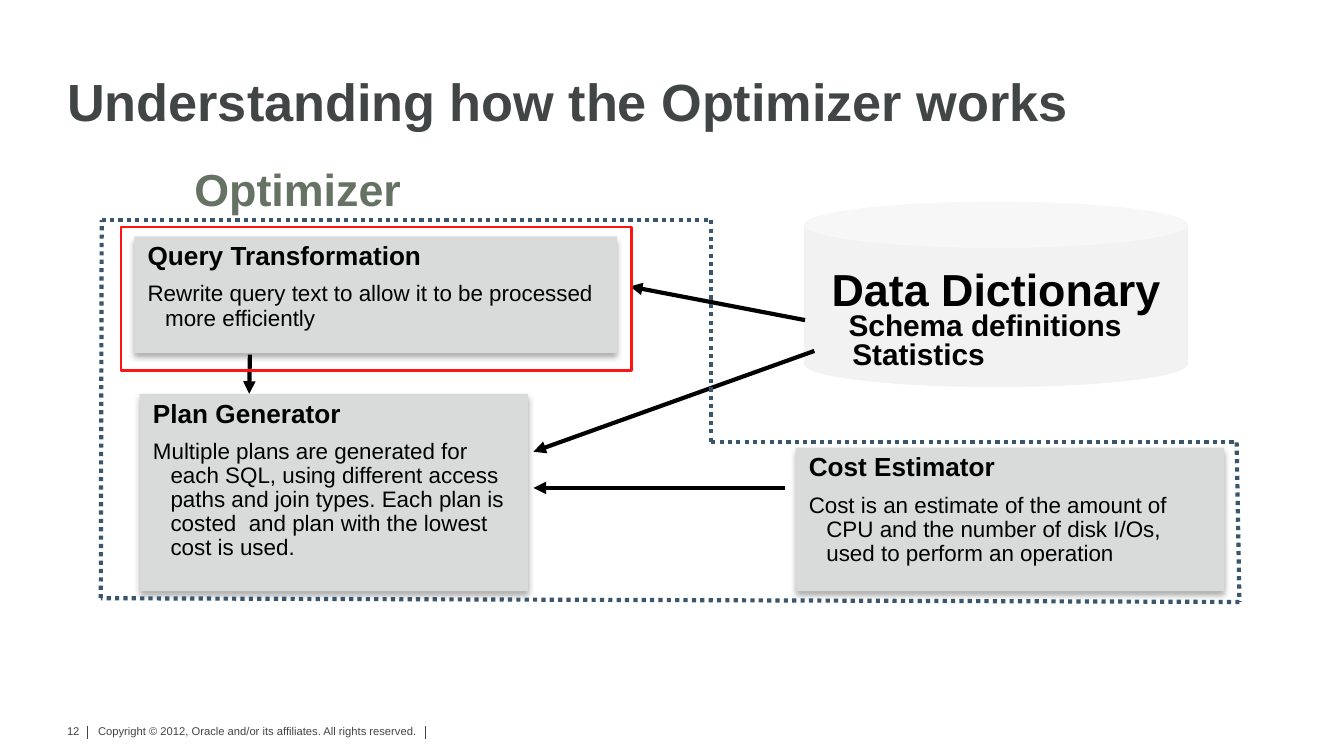
import itertools
from dataclasses import dataclass

import pptx
import pptx.dml.color
import pptx.enum.dml
import pptx.enum.shapes
import pptx.enum.text
import pptx.oxml
import pptx.oxml.ns
import pptx.util
from lxml import etree

Pt = pptx.util.Pt
ShapeKind = pptx.enum.shapes.MSO_SHAPE
Align = pptx.enum.text.PP_ALIGN
Anchor = pptx.enum.text.MSO_ANCHOR
FONT = "Arial"
BLACK, DARK_GRAY, NAVY = "000000", "424545", "39566E"


@dataclass
class Frame:
    left: float
    top: float
    width: float
    height: float

    def lengths(self):
        return Pt(self.left), Pt(self.top), Pt(self.width), Pt(self.height)


@dataclass
class Stage:
    frame: Frame
    heading: str
    detail: str


@dataclass
class Label:
    frame: Frame
    text: str
    size: float
    color: str = BLACK
    bold: bool = True
    align: Align = Align.CENTER
    spacing: float = 0.9
    margins: tuple = (7.2, 3.6, 7.2, 3.6)
    wrap: bool = True


@dataclass
class Line:
    start: tuple
    end: tuple
    color: str = BLACK
    width: float = 2.25
    dotted: bool = False
    arrow: bool = False


STAGES = [
    Stage(Frame(72, 126.7, 258.5, 62.6), "Query Transformation",
          "Rewrite query text to allow it to be processed more efficiently"),
    Stage(Frame(74.9, 211, 208, 105.8), "Plan Generator",
          "Multiple plans are generated for each SQL, using different access paths and join types. "
          "Each plan is costed  and plan with the lowest cost is used."),
    Stage(Frame(426.2, 239.8, 229.7, 77), "Cost Estimator",
          "Cost is an estimate of the amount of CPU and the number of disk I/Os, "
          "used to perform an operation"),
]
LABELS = [
    Label(Frame(52.6, 86.4, 213.8, 37.4), "Optimizer", 24, "667263"),
    Label(Frame(443.5, 178.6, 97.2, 25.2), "Statistics", 16),
    Label(Frame(437.8, 162.7, 180, 25.2), "Schema definitions", 16),
    Label(Frame(49.7, 386.6, 197.3, 17.3),
          "Copyright © 2012, Oracle and/or its affiliates. All rights reserved.",
          6, DARK_GRAY, False, Align.LEFT, 1, (2.9, 1.4, 2.9, 1.4)),
    Label(Frame(28.1, 384.5, 21.6, 14.4), "12", 6, DARK_GRAY, False, Align.RIGHT, 1, wrap=False),
]
ARROWS = [
    Line((133.9, 190), (133.5, 211), arrow=True),
    Line((420.5, 261.4), (285.8, 261.4), arrow=True),
    Line((436.3, 188), (285.8, 242), arrow=True),
    Line((431.3, 171.5), (337.5, 153.5), arrow=True),
]
OPTIMIZER_OUTLINE = [(54.5, 118), (381, 118), (381, 237), (662.5, 237), (664, 322.5), (54, 320.5)]
FOOTER_BARS = [46.8, 228]


def rgb(color: str) -> pptx.dml.color.RGBColor:
    return pptx.dml.color.RGBColor.from_string(color)


def add_element(parent, tag: str, **attributes):
    element = etree.SubElement(parent, pptx.oxml.ns.qn(tag))
    for name, value in attributes.items():
        element.set(name, str(value))
    return element


def format_paragraph(paragraph, size: float, color: str, bold: bool,
                     align=Align.LEFT, spacing: float = 1) -> None:
    paragraph.alignment = align
    paragraph.line_spacing = spacing
    for run in paragraph.runs:
        run.font.name = FONT
        run.font.size = Pt(size)
        run.font.bold = bold
        run.font.color.rgb = rgb(color)


def set_margins(text_frame, left: float, top: float, right: float, bottom: float) -> None:
    text_frame.margin_left, text_frame.margin_top = Pt(left), Pt(top)
    text_frame.margin_right, text_frame.margin_bottom = Pt(right), Pt(bottom)


def add_label(slide, label: Label) -> None:
    text_frame = slide.shapes.add_textbox(*label.frame.lengths()).text_frame
    text_frame.word_wrap = label.wrap
    set_margins(text_frame, *label.margins)
    text_frame.text = label.text
    format_paragraph(text_frame.paragraphs[0], label.size, label.color, label.bold,
                     label.align, label.spacing)


def add_plain_shape(slide, kind, frame: Frame):
    shape = slide.shapes.add_shape(kind, *frame.lengths())
    shape.shadow.inherit = False
    shape.line.fill.background()
    shape.text_frame.word_wrap = True
    shape.text_frame.vertical_anchor = Anchor.TOP
    return shape


def add_stage(slide, stage: Stage) -> None:
    shape = add_plain_shape(slide, ShapeKind.RECTANGLE, stage.frame)
    shape.fill.solid()
    shape.fill.fore_color.rgb = rgb("D9DADA")
    effects = shape._element.spPr.find(pptx.oxml.ns.qn("a:effectLst"))
    shadow = add_element(effects, "a:outerShdw", blurRad=Pt(3.5), dist=Pt(2.2),
                         dir=5400000, algn="t", rotWithShape=0)
    add_element(add_element(shadow, "a:srgbClr", val=BLACK), "a:alpha", val=32000)
    text_frame = shape.text_frame
    text_frame.text = f"{stage.heading}\n{stage.detail}"
    for paragraph, size, bold in zip(text_frame.paragraphs, (14, 12), (True, False)):
        format_paragraph(paragraph, size, BLACK, bold, spacing=0.9)
        properties = paragraph._p.get_or_add_pPr()
        properties.set("marL", str(Pt(9.4)))
        properties.set("indent", str(Pt(-9.4)))
    text_frame.paragraphs[1].space_before = Pt(6)


def add_line(slide, line: Line) -> None:
    points = [Pt(value) for value in (*line.start, *line.end)]
    connector = slide.shapes.add_connector(pptx.enum.shapes.MSO_CONNECTOR.STRAIGHT, *points)
    connector.line.color.rgb = rgb(line.color)
    connector.line.width = Pt(line.width)
    if line.dotted:
        connector.line.dash_style = pptx.enum.dml.MSO_LINE.ROUND_DOT
    if line.arrow:
        add_element(connector.line._get_or_add_ln(), "a:tailEnd", type="triangle")
    add_element(connector._element.spPr, "a:effectLst")


def add_title(slide) -> None:
    title = slide.shapes.title
    title.left, title.top, title.width, title.height = Frame(36, 38.2, 648, 33.1).lengths()
    text_frame = title.text_frame
    text_frame.text = "Understanding how the Optimizer works"
    text_frame.vertical_anchor = Anchor.BOTTOM
    text_frame.auto_size = pptx.enum.text.MSO_AUTO_SIZE.NONE
    set_margins(text_frame, 0, 0, 0, 0)
    format_paragraph(text_frame.paragraphs[0], 28, DARK_GRAY, True, spacing=0.9)


def add_data_dictionary(slide) -> None:
    can = add_plain_shape(slide, ShapeKind.CAN, Frame(430.6, 108, 205.9, 99.4))
    can.adjustments[0] = 0.25
    can.fill.solid()
    can.fill.fore_color.rgb = rgb("C0C0C0")
    fill_color = can._element.spPr.find(".//" + pptx.oxml.ns.qn("a:srgbClr"))
    add_element(fill_color, "a:alpha", val=20000)
    set_margins(can.text_frame, 7.2, 7.2, 7.2, 3.6)
    can.text_frame.text = "Data Dictionary"
    format_paragraph(can.text_frame.paragraphs[0], 24, BLACK, True, Align.CENTER)


def add_highlight(slide) -> None:
    highlight = add_plain_shape(slide, ShapeKind.RECTANGLE, Frame(64.8, 121.7, 273.6, 77))
    highlight.fill.background()
    highlight.line.color.rgb = rgb("FF1414")
    highlight.line.width = Pt(1.5)


def main() -> None:
    presentation = pptx.Presentation()
    presentation.slide_width, presentation.slide_height = Pt(720), Pt(405)
    slide = presentation.slides.add_slide(presentation.slide_layouts[5])
    add_title(slide)
    add_data_dictionary(slide)
    for stage in STAGES:
        add_stage(slide, stage)
    closed_outline = OPTIMIZER_OUTLINE + OPTIMIZER_OUTLINE[:1]
    borders = [Line(start, end, NAVY, dotted=True)
               for start, end in itertools.pairwise(closed_outline)]
    bars = [Line((x, 388.8), (x, 396), DARK_GRAY, 0.5) for x in FOOTER_BARS]
    for line in ARROWS + borders + bars:
        add_line(slide, line)
    for label in LABELS:
        add_label(slide, label)
    add_highlight(slide)
    presentation.save("out.pptx")


if __name__ == "__main__":
    main()
